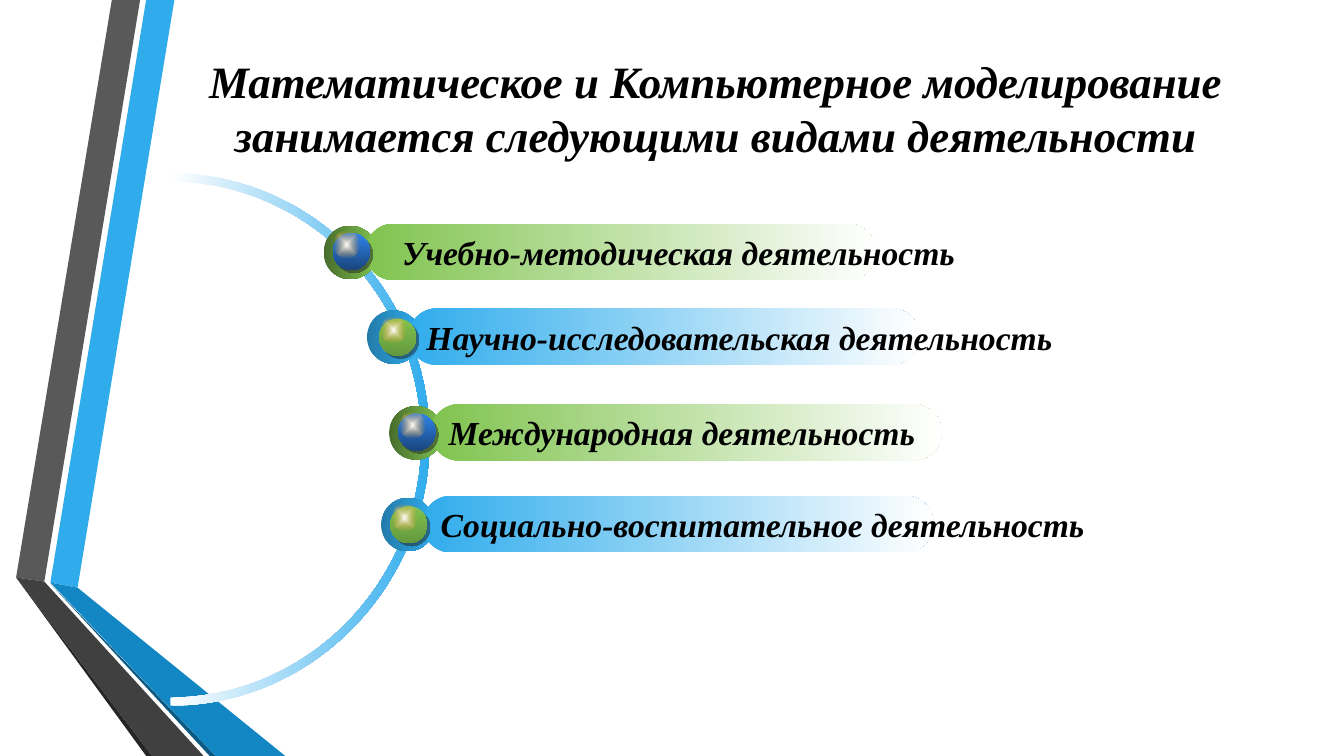
from dataclasses import dataclass

from lxml import etree
from pptx import Presentation
from pptx.dml.color import RGBColor
from pptx.enum.shapes import MSO_SHAPE as Shape
from pptx.enum.text import MSO_ANCHOR as Anchor, PP_ALIGN as Align
from pptx.oxml import parse_xml
from pptx.oxml.ns import nsdecls, qn
from pptx.util import Inches, Pt


@dataclass(frozen=True)
class Theme:
    font: str = "Times New Roman"
    title_size: int = 32
    label_size: int = 24
    text: str = "000000"
    white: str = "FFFFFF"
    blue: str = "30ACEC"
    green: str = "80C34F"
    blue_ring: tuple = ("227BA9", "30ACEC")
    green_ring: tuple = ("476C2C", "80C34F")
    blue_ball: tuple = ("3085ED", "19457C")
    green_ball: tuple = ("80C34F", "64993E")
    glow: str = "E9940B"
    shadow: str = "212121"
    gray: str = "595959"
    gray_fold: str = "404040"
    gray_edge: str = "262626"
    blue_fold: str = "1287C3"
    blue_edge: str = "0C5A82"


T = Theme()
GREEN = (T.green, T.green_ring, T.blue_ball)
BLUE = (T.blue, T.blue_ring, T.green_ball)


def paint_gradient(sp, colors, angle=0):
    sp.fill.gradient()
    sp.fill.gradient_angle = angle
    for stop, color in zip(sp.fill.gradient_stops, colors):
        stop.color.rgb = RGBColor.from_string(color)


def add_outline(s, points):
    corners = [(Inches(x), Inches(y)) for x, y in points]
    builder = s.shapes.build_freeform(*corners[0])
    builder.add_line_segments(corners[1:], close=True)
    sp = builder.convert_to_shape()
    sp.shadow.inherit = False
    sp.line.fill.background()
    return sp


def add_preset(s, kind, x, y, w, h, colors, angle=0):
    sp = s.shapes.add_shape(kind, Inches(x), Inches(y), Inches(w), Inches(h))
    sp.shadow.inherit = False
    sp.line.fill.background()
    paint_gradient(sp, colors, angle)
    return sp


def write_text(sp, text, size, align=Align.LEFT, wrap=False, anchor=Anchor.MIDDLE):
    tf = sp.text_frame
    tf.word_wrap = wrap
    tf.vertical_anchor = anchor
    p = tf.paragraphs[0]
    p.text = text
    p.alignment = align
    font = p.runs[0].font
    font.name, font.size = T.font, Pt(size)
    font.bold = font.italic = True
    font.color.rgb = RGBColor.from_string(T.text)


def add_ribbons(s, x, y, bottom):
    ribbons = [
        (T.blue, [(0.34, 5.78), (0.61, 5.83), (1.57, 0), (1.29, 0)]),
        (T.gray, [(1.23, 0), (0.95, 0), (0, 5.73), (0.28, 5.77)]),
        (T.gray_edge, [(0, 5.73), (1.29, bottom), (1.35, bottom)]),
        (T.blue_edge, [(0.34, 5.79), (1.92, bottom), (1.98, bottom)]),
        (T.blue_fold, [(0.34, 5.78), (1.98, bottom), (2.67, bottom), (0.61, 5.83)]),
        (T.gray_fold, [(1.86, bottom), (0.28, 5.77), (0, 5.73), (1.35, bottom)]),
    ]
    for color, points in ribbons:
        sp = add_outline(s, [(x + dx, y + dy) for dx, dy in points])
        sp.fill.solid()
        sp.fill.fore_color.rgb = RGBColor.from_string(color)


def add_title(s, x, y, w, h, text):
    sp = s.shapes.add_textbox(Inches(x), Inches(y), Inches(w), Inches(h))
    write_text(sp, text, T.title_size, Align.CENTER, wrap=True, anchor=Anchor.BOTTOM)
    sp.text_frame.margin_bottom = Inches(0.06)


def bend(segments):
    for i in range(0, len(segments), 3):
        curve = etree.Element(qn("a:cubicBezTo"))
        segments[i].addprevious(curve)
        for segment in segments[i:i + 3]:
            curve.append(segment[0])
            segment.getparent().remove(segment)


def add_arc(s, x, y, w, h, band=0.08, pull=0.55):
    middle = y + h / 2

    def edge(rx, ry):
        curve = [(0, -1), (pull, -1), (1, -pull), (1, 0),
                 (1, pull), (pull, 1), (0, 1)]
        return [(x + rx * dx, middle + ry * dy) for dx, dy in curve]

    outer, inner = edge(w, h / 2), edge(w - band, h / 2 - band)
    sp = add_outline(s, outer + inner[::-1])
    lines = list(sp._element.iter(qn("a:lnTo")))
    bend(lines[:6])
    bend(lines[7:13])
    paint_gradient(sp, (T.white, T.blue))


def add_ball(s, x, y, colors):
    ball = add_preset(s, Shape.OVAL, x, y, 0.37, 0.37, colors, 270)
    effects = ball._element.spPr.find(qn("a:effectLst"))
    effects.append(parse_xml(
        f'<a:outerShdw {nsdecls("a")} blurRad="0" dist="{Pt(2.8)}" dir="2700000" '
        f'algn="ctr" rotWithShape="0"><a:srgbClr val="{T.shadow}">'
        '<a:alpha val="50000"/></a:srgbClr></a:outerShdw>'))
    shine = add_preset(s, Shape.OVAL, x + 0.01, y - 0.02, 0.26, 0.27, (T.white, T.glow))
    grad = shine._element.spPr.find(qn("a:gradFill"))
    last_color = grad.findall(".//" + qn("a:srgbClr"))[-1]
    last_color.append(parse_xml(f'<a:alpha {nsdecls("a")} val="0"/>'))
    grad.replace(grad.find(qn("a:lin")), parse_xml(
        f'<a:path {nsdecls("a")} path="shape"><a:fillToRect l="50000" t="50000" '
        'r="50000" b="50000"/></a:path>'))


def add_activity(s, x, y, text, palette, ball_at=(0.09, 0.07), label_dx=None):
    color, ring, ball = palette
    add_preset(s, Shape.OVAL, x, y, 0.53, 0.53, ring)
    bar = add_preset(s, Shape.ROUNDED_RECTANGLE, x + 0.41, y - 0.02, 5.07, 0.56,
                     (color, T.white))
    bar.adjustments[0] = 0.5
    add_ball(s, x + ball_at[0], y + ball_at[1], ball)
    if label_dx is None:
        write_text(bar, text, T.label_size)
    else:
        label = s.shapes.add_textbox(Inches(x + label_dx), Inches(y + 0.01),
                                     Inches(6.18), Inches(0.5))
        write_text(label, text, T.label_size, wrap=True, anchor=Anchor.TOP)


def main():
    prs = Presentation()
    prs.slide_width, prs.slide_height = Inches(13.33), Inches(7.5)
    s = prs.slides.add_slide(prs.slide_layouts[6])
    add_ribbons(s, 0.16, 0, 7.5)
    add_title(s, 1.62, 0.75, 10.96, 0.91,
              "Математическое и Компьютерное моделирование "
              "занимается следующими видами деятельности")
    add_arc(s, 1.69, 1.72, 2.57, 5.28)
    add_activity(s, 3.86, 4.03, "Международная деятельность", GREEN)
    add_activity(s, 3.78, 4.94, "Социально-воспитательное деятельность", BLUE,
                 ball_at=(0.09, 0.08))
    add_activity(s, 3.64, 3.08, "Научно-исследовательская деятельность", BLUE,
                 ball_at=(0.12, 0.08))
    add_activity(s, 3.21, 2.24, "Учебно-методическая деятельность", GREEN,
                 label_dx=0.68)
    prs.save("out.pptx")


if __name__ == "__main__":
    main()
